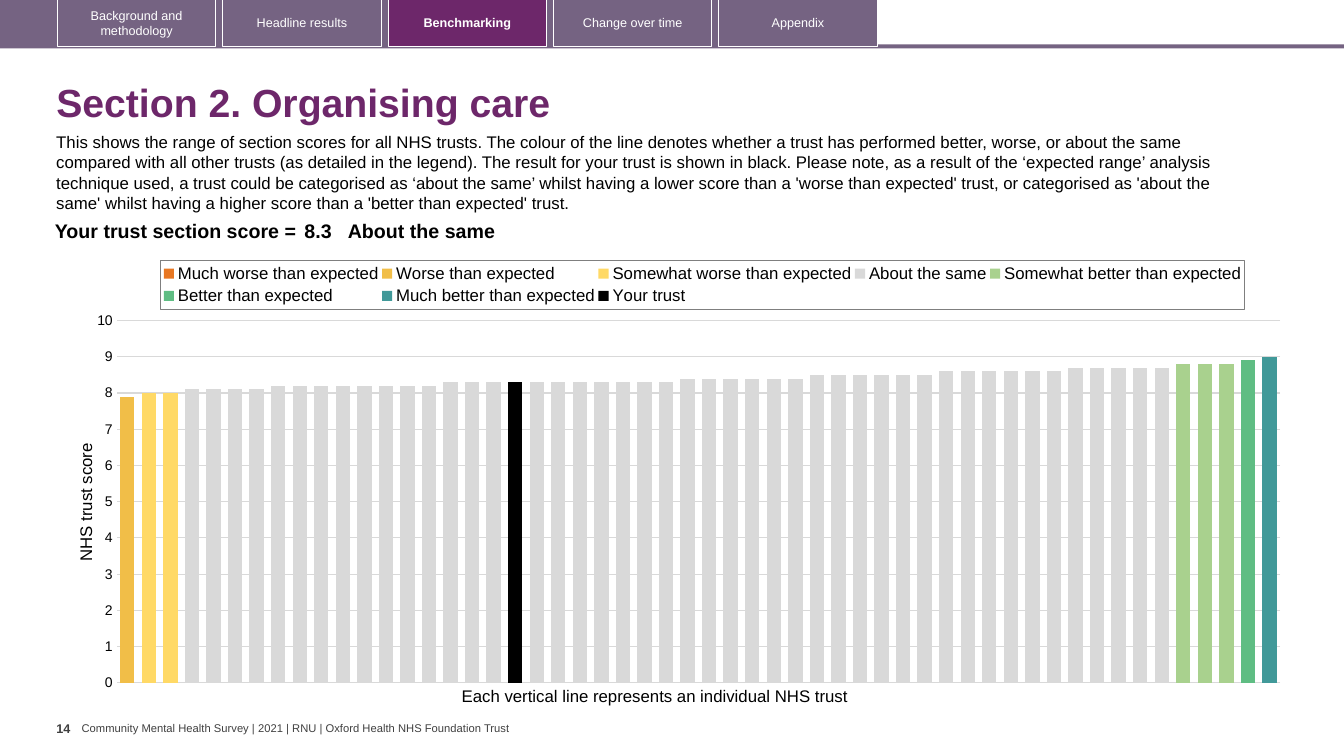
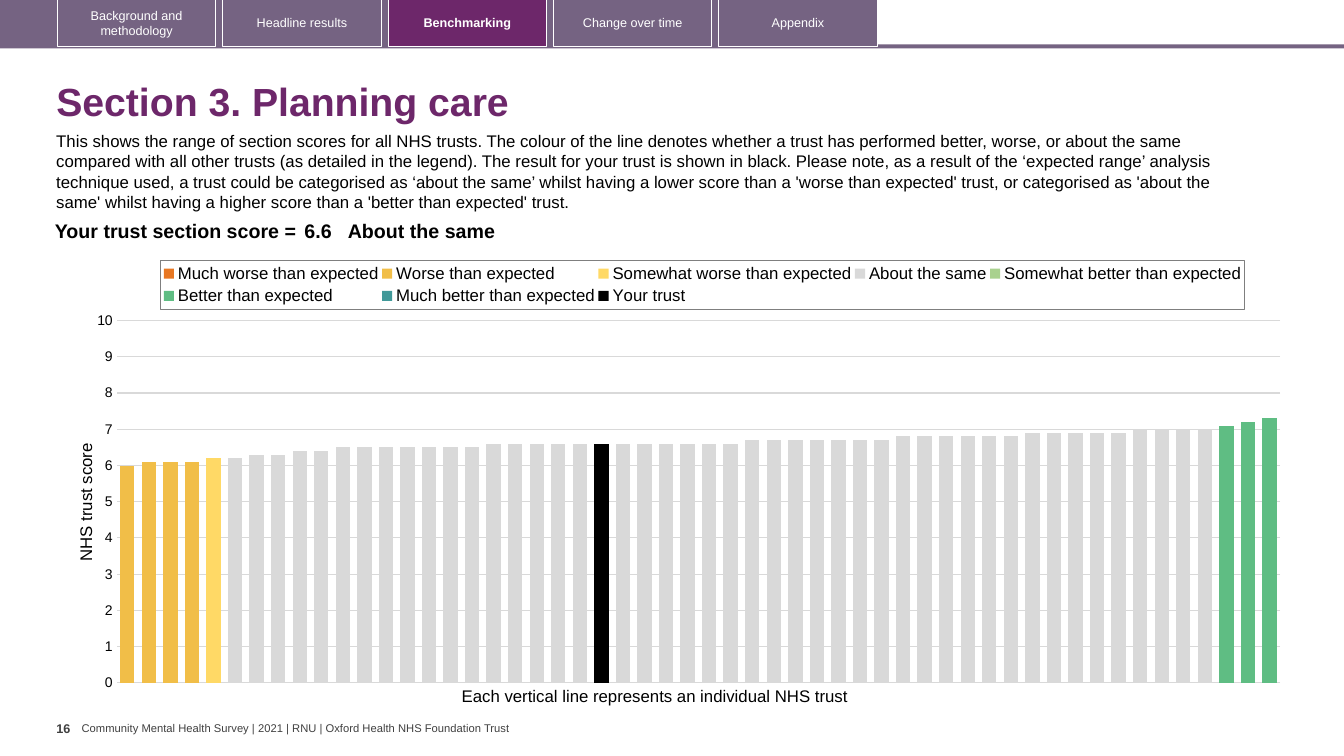
from copy import deepcopy
from dataclasses import dataclass

from pptx import Presentation
from pptx.chart.data import CategoryChartData
from pptx.dml.color import RGBColor
from pptx.enum.chart import XL_CHART_TYPE, XL_LEGEND_POSITION, XL_TICK_MARK
from pptx.enum.shapes import MSO_SHAPE
from pptx.enum.text import MSO_ANCHOR, PP_ALIGN
from pptx.oxml import parse_xml
from pptx.oxml.ns import nsdecls, qn
from pptx.util import Inches, Pt

FONT = "Arial"
PURPLE, MAUVE = "6D276A", "756382"
BLACK, WHITE, DARK_GREY, GRID_GREY = "000000", "FFFFFF", "404040", "D9D9D9"

TABS = ["Background and methodology", "Headline results", "Benchmarking",
        "Change over time", "Appendix"]
ACTIVE_TAB = "Benchmarking"
TAB_LEFT, TAB_PITCH, TAB_W, TAB_H = 0.57, 1.64, 1.57, 0.47

FOOTER = ("Community Mental Health Survey | 2021 | RNU | "
          "Oxford Health NHS Foundation Trust")
INTRO = (
    "This shows the range of section scores for all NHS trusts. The colour of the "
    "line denotes whether a trust has performed better, worse, or about the same "
    "compared with all other trusts (as detailed in the legend). The result for your "
    "trust is shown in black. Please note, as a result of the ‘expected range’ "
    "analysis technique used, a trust could be categorised as ‘about the same’ whilst "
    "having a lower score than a 'worse than expected' trust, or categorised as "
    "'about the same' whilst having a higher score than a 'better than expected' trust."
)

MUCH_WORSE, WORSE = "Much worse than expected", "Worse than expected"
SOMEWHAT_WORSE, SAME = "Somewhat worse than expected", "About the same"
SOMEWHAT_BETTER, BETTER = "Somewhat better than expected", "Better than expected"
MUCH_BETTER, YOURS = "Much better than expected", "Your trust"
BAND_COLOURS = {
    MUCH_WORSE: "E87722", WORSE: "F1BE48", SOMEWHAT_WORSE: "FFD966", SAME: "D9D9D9",
    SOMEWHAT_BETTER: "A9D18E", BETTER: "5FBD83", MUCH_BETTER: "419999", YOURS: BLACK,
}


@dataclass
class Run:
    """Neighbouring trusts with the same band and score."""
    band: str
    score: float
    count: int = 1


@dataclass
class Section:
    page: int
    title: str
    text_top: float
    score: float
    rank: int  # place of your trust, counted from the left
    runs: list[Run]


SECTIONS = [
    Section(14, "Section 2. Organising care", 1.26, 8.3, 19, [
        Run(WORSE, 7.9), Run(SOMEWHAT_WORSE, 8, 2),
        Run(SAME, 8.1, 4), Run(SAME, 8.2, 8), Run(SAME, 8.3, 11), Run(SAME, 8.4, 6),
        Run(SAME, 8.5, 6), Run(SAME, 8.6, 6), Run(SAME, 8.7, 5),
        Run(SOMEWHAT_BETTER, 8.8, 3), Run(BETTER, 8.9), Run(MUCH_BETTER, 9),
    ]),
    Section(16, "Section 3. Planning care", 1.25, 6.6, 23, [
        Run(WORSE, 6), Run(WORSE, 6.1, 3), Run(SOMEWHAT_WORSE, 6.2),
        Run(SAME, 6.2), Run(SAME, 6.3, 2), Run(SAME, 6.4, 2), Run(SAME, 6.5, 7),
        Run(SAME, 6.6, 12), Run(SAME, 6.7, 7), Run(SAME, 6.8, 6), Run(SAME, 6.9, 5),
        Run(SAME, 7, 4), Run(BETTER, 7.1), Run(BETTER, 7.2), Run(BETTER, 7.3),
    ]),
]


def rgb(colour: str) -> RGBColor:
    return RGBColor.from_string(colour)


def style(font, size: float, colour: str = BLACK, bold: bool = False) -> None:
    font.name, font.size, font.bold = FONT, Pt(size), bold
    font.color.rgb = rgb(colour)


def add_text(s, box: tuple, text: str, size: float, colour: str = BLACK,
             bold: bool = False, wrap: bool = True, inset: tuple = (0.1, 0.05),
             anchor=MSO_ANCHOR.TOP):
    tf = s.shapes.add_textbox(*map(Inches, box)).text_frame
    tf.word_wrap, tf.vertical_anchor = wrap, anchor
    tf.margin_left = tf.margin_right = Inches(inset[0])
    tf.margin_top = tf.margin_bottom = Inches(inset[1])
    p = tf.paragraphs[0]
    p.text = text
    style(p.font, size, colour, bold)
    return p


def add_rect(s, box: tuple, fill: str | None, line: str | None = None):
    sp = s.shapes.add_shape(MSO_SHAPE.RECTANGLE, *map(Inches, box))
    sp.shadow.inherit = False
    if fill:
        sp.fill.solid()
        sp.fill.fore_color.rgb = rgb(fill)
    else:
        sp.fill.background()
    if line:
        sp.line.color.rgb = rgb(line)
        sp.line.width = Pt(0.75)
    else:
        sp.line.fill.background()
    return sp


def add_frame(s, page: int) -> None:
    """Footer, page number and navigation tabs."""
    add_text(s, (0.81, 7.16, 4.3, 0.13), FOOTER, 8, DARK_GREY, wrap=False,
             inset=(0, 0), anchor=MSO_ANCHOR.MIDDLE)
    add_text(s, (0.56, 7.1, 0.25, 0.4), str(page), 9, DARK_GREY, bold=True,
             wrap=False, inset=(0, 0.05))
    add_rect(s, (0, 0.44, 13.33, 0.04), MAUVE)
    add_rect(s, (0, 0, 8.7, TAB_H), MAUVE)
    for i, name in enumerate(TABS):
        active = name == ACTIVE_TAB
        sp = add_rect(s, (TAB_LEFT + i * TAB_PITCH, -0.01, TAB_W, TAB_H),
                      PURPLE if active else None, WHITE)
        tf = sp.text_frame
        tf.word_wrap, tf.vertical_anchor = True, MSO_ANCHOR.MIDDLE
        p = tf.paragraphs[0]
        p.text, p.alignment = name, PP_ALIGN.CENTER
        style(p.font, 9, WHITE, active)


def add_score(s, score: float) -> None:
    table = s.shapes.add_table(1, 3, Inches(0.35), Inches(2.15),
                               Inches(11.69), Inches(0.31)).table
    table.first_row = table.horz_banding = False
    columns = [("Your trust section score =", 2.63, 0.04, PP_ALIGN.RIGHT),
               (str(score), 0.47, 0.04, PP_ALIGN.LEFT),
               (SAME, 8.59, 0, PP_ALIGN.LEFT)]
    for i, (text, width, margin, align) in enumerate(columns):
        table.columns[i].width = Inches(width)
        cell = table.cell(0, i)
        cell.fill.background()
        cell.margin_left = cell.margin_right = Inches(margin)
        cell.margin_top = cell.margin_bottom = Inches(0.04)
        p = cell.text_frame.paragraphs[0]
        p.text, p.alignment = text, align
        style(p.font, 14, bold=True)


def set_layout(parent, index: int, inner: bool = False, **place: float) -> None:
    """Fix a chart part at fractions of the chart area."""
    for old in parent.findall(qn("c:layout")):
        parent.remove(old)
    target = '<c:layoutTarget val="inner"/>' if inner else ""
    modes = '<c:xMode val="edge"/><c:yMode val="edge"/>'
    sizes = "".join(f'<c:{k} val="{v}"/>' for k, v in place.items())
    parent.insert(index, parse_xml(
        f'<c:layout {nsdecls("c")}><c:manualLayout>{target}{modes}{sizes}'
        "</c:manualLayout></c:layout>"))


def move_last_to_second_axis(chart) -> None:
    """Plot the last series on its own, unlabelled right axis."""
    area = chart.plots[0]._element.getparent()
    bars = area.find(qn("c:barChart"))
    second = deepcopy(bars)
    bars.remove(bars.findall(qn("c:ser"))[-1])
    for ser in second.findall(qn("c:ser"))[:-1]:
        second.remove(ser)
    bars.addnext(second)

    cat_id, val_id = "50010", "50020"
    for ref, new_id in zip(second.findall(qn("c:axId")), (cat_id, val_id)):
        ref.set("val", new_id)
    val_ax = area.find(qn("c:valAx"))
    right, hidden = deepcopy(val_ax), deepcopy(area.find(qn("c:catAx")))
    for axis, own, cross in ((right, val_id, cat_id), (hidden, cat_id, val_id)):
        axis.find(qn("c:axId")).set("val", own)
        axis.find(qn("c:crossAx")).set("val", cross)
    for tag in ("c:majorGridlines", "c:title"):
        right.remove(right.find(qn(tag)))
    for tag, value in (("c:axPos", "r"), ("c:majorTickMark", "out"),
                       ("c:tickLblPos", "none"), ("c:crosses", "max")):
        right.find(qn(tag)).set("val", value)
    val_ax.addnext(right)
    right.addnext(hidden)


def add_scores_chart(s, section: Section) -> None:
    # Data: one column per trust, each in the series of its band
    trusts = [(run.band, run.score) for run in section.runs for _ in range(run.count)]
    data = CategoryChartData(number_format="0.0")
    data.categories = [str(n) for n in range(1, len(trusts) + 1)]
    for name in BAND_COLOURS:
        if name == YOURS:
            values = [section.score if n == section.rank else None
                      for n in range(1, len(trusts) + 1)]
        else:
            values = [score if band == name else None for band, score in trusts]
        data.add_series(name, values)
    chart = s.shapes.add_chart(XL_CHART_TYPE.COLUMN_CLUSTERED, Inches(0.67), Inches(2.47),
                               Inches(12.15), Inches(4.44), data).chart
    chart.has_title = False
    chart.font.name, chart.font.size = "Calibri", Pt(10)
    chart.font.color.rgb = rgb(BLACK)

    # Columns
    plot = chart.plots[0]
    plot.gap_width, plot.overlap, plot.vary_by_categories = 50, 100, False
    for series in plot.series:
        series.format.fill.solid()
        series.format.fill.fore_color.rgb = rgb(BAND_COLOURS[series.name])
    set_layout(plot._element.getparent(), 0, inner=True, x=0.04, y=0.16, w=0.95, h=0.81)

    # Axes
    chart.category_axis.visible = False
    axis = chart.value_axis
    axis.minimum_scale, axis.maximum_scale, axis.major_unit = 0, 10, 1
    axis.major_tick_mark = axis.minor_tick_mark = XL_TICK_MARK.NONE
    axis.format.line.fill.background()
    axis.major_gridlines.format.line.color.rgb = rgb(GRID_GREY)
    axis.major_gridlines.format.line.width = Pt(0.75)
    axis.tick_labels.number_format = "0"
    axis.tick_labels.number_format_is_linked = False
    style(axis.tick_labels.font, 10)
    p = axis.axis_title.text_frame.paragraphs[0]
    p.text = "NHS trust score"
    style(p.font, 12)
    title = axis.axis_title._element
    body = next(title.iter(qn("a:bodyPr")))
    body.set("rot", "-5400000")
    body.set("vert", "horz")
    set_layout(title, 1, x=0.004, y=0.427)

    # Legend
    chart.has_legend = True
    legend = chart.legend
    legend.position = XL_LEGEND_POSITION.TOP
    legend.include_in_layout = False
    style(legend.font, 12)
    element = legend._element
    set_layout(element, 1, x=0.076, y=0.025, w=0.885, h=0.11)
    element.find(qn("c:overlay")).addnext(parse_xml(
        f'<c:spPr {nsdecls("c", "a")}><a:ln w="9525"><a:solidFill>'
        '<a:srgbClr val="7F7F7F"/></a:solidFill></a:ln></c:spPr>'))

    move_last_to_second_axis(chart)


def add_section(prs, section: Section) -> None:
    s = prs.slides.add_slide(prs.slide_layouts[6])
    add_frame(s, section.page)
    p = add_text(s, (0.46, section.text_top - 0.58, 12.49, 0.72), section.title, 28,
                 PURPLE, bold=True, anchor=MSO_ANCHOR.MIDDLE)
    p.line_spacing = 0.9
    add_text(s, (0.46, section.text_top, 12.13, 0.91), INTRO, 12)
    add_text(s, (4.48, 6.75, 4.11, 0.3),
             "Each vertical line represents an individual NHS trust", 12, wrap=False)
    add_scores_chart(s, section)
    add_score(s, section.score)


def main() -> None:
    prs = Presentation()
    prs.slide_width, prs.slide_height = Inches(13.33), Inches(7.5)
    for section in SECTIONS:
        add_section(prs, section)
    prs.save("out.pptx")


if __name__ == "__main__":
    main()
